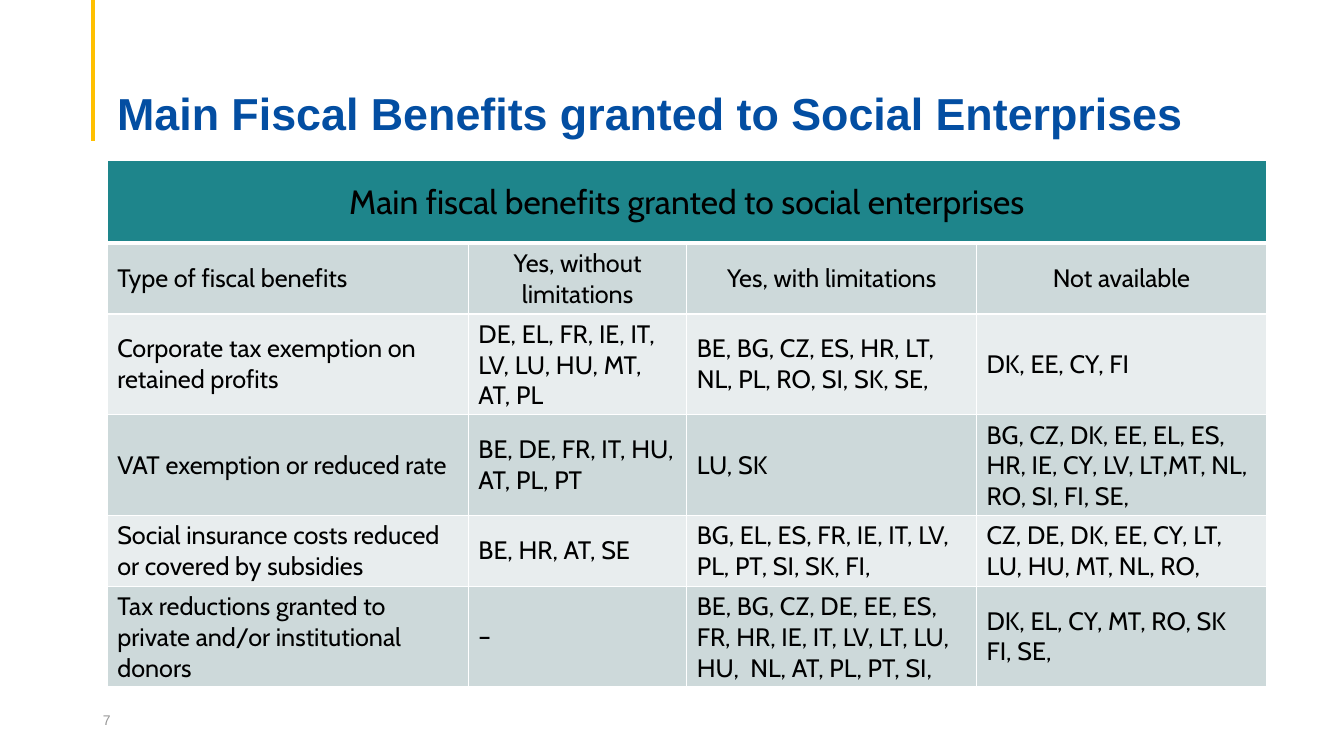
"""Build the slide on the main fiscal benefits granted to social enterprises."""
import pptx
import pptx.dml.color
import pptx.enum.shapes
import pptx.enum.text
import pptx.oxml
import pptx.oxml.ns
import pptx.util

Pt = pptx.util.Pt
RGB = pptx.dml.color.RGBColor.from_string
ALIGN = pptx.enum.text.PP_ALIGN
ANCHOR = pptx.enum.text.MSO_ANCHOR
NS = pptx.oxml.ns.nsdecls("a")

COLORS = {
    "title": "034EA2",
    "accent": "FFC000",
    "number": "979797",
    "text": "000000",
    "border": "FFFFFF",
    "header": "1E858B",
    "dark": "CDD9DA",
    "light": "E8EDEE",
}
COL_WIDTHS = [258, 156, 207, 207]
ROW_HEIGHTS = [59, 50.4, 72, 72, 50.4, 72]
ROWS = [
    ["Main fiscal benefits granted to social enterprises", "", "", ""],
    ["Type of fiscal benefits", "Yes, without limitations",
     "Yes, with limitations", "Not available"],
    ["Corporate tax exemption on retained profits",
     "DE, EL, FR, IE, IT, LV, LU, HU, MT, AT, PL",
     "BE, BG, CZ, ES, HR, LT, NL, PL, RO, SI, SK, SE,",
     "DK, EE, CY, FI"],
    ["VAT exemption or reduced rate",
     "BE, DE, FR, IT, HU, AT, PL, PT",
     "LU, SK",
     "BG, CZ, DK, EE, EL, ES, HR, IE, CY, LV, LT,MT, NL, RO, SI, FI, SE,"],
    ["Social insurance costs reduced or covered by subsidies",
     "BE, HR, AT, SE",
     "BG, EL, ES, FR, IE, IT, LV, PL, PT, SI, SK, FI,",
     "CZ, DE, DK, EE, CY, LT, LU, HU, MT, NL, RO,"],
    ["Tax reductions granted to private and/or institutional donors",
     "–",
     "BE, BG, CZ, DE, EE, ES, FR, HR, IE, IT, LV, LT, LU, HU,  NL, AT, PL, PT, SI,",
     "DK, EL, CY, MT, RO, SK FI, SE,"],
]


def add_run(p, text, font, size, color, bold=False):
    r = p.add_run()
    r.text = text
    r.font.name = font
    r.font.size = Pt(size)
    r.font.bold = bold
    r.font.color.rgb = RGB(COLORS[color])


def add_text(box, anchor, text, size, color, bold=False):
    sp = s.shapes.add_textbox(*map(Pt, box))
    tf = sp.text_frame
    tf.word_wrap = True
    tf.vertical_anchor = anchor
    add_run(tf.paragraphs[0], text, "Arial", size, color, bold)
    return tf


prs = pptx.Presentation()
prs.slide_width, prs.slide_height = Pt(960), Pt(540)
s = prs.slides.add_slide(prs.slide_layouts[6])

line = s.shapes.add_connector(
    pptx.enum.shapes.MSO_CONNECTOR.STRAIGHT, Pt(66.4), Pt(0), Pt(66.4), Pt(100.8))
line.line.color.rgb = RGB(COLORS["accent"])
line.line.width = Pt(2.25)
line._element.spPr.append(pptx.oxml.parse_xml(f"<a:effectLst {NS}/>"))

add_text((66.4, 499.7, 216, 28.8), ANCHOR.MIDDLE, "7", 10, "number")
title = add_text((76.6, 38.2, 828, 62), ANCHOR.BOTTOM,
                 "Main Fiscal Benefits granted to Social Enterprises", 32, "title", True)
title.margin_bottom = Pt(0)
title.paragraphs[0].line_spacing = 0.9

table = s.shapes.add_table(
    len(ROWS), len(COL_WIDTHS), Pt(76.6), Pt(114.8),
    Pt(sum(COL_WIDTHS)), Pt(sum(ROW_HEIGHTS))).table
table.first_row = False
table.horz_banding = False
for col, width in zip(table.columns, COL_WIDTHS):
    col.width = Pt(width)

for i, texts in enumerate(ROWS):
    table.rows[i].height = Pt(ROW_HEIGHTS[i])
    fill = "header" if i == 0 else "dark" if i % 2 else "light"
    for j, text in enumerate(texts):
        cell = table.cell(i, j)
        cell.vertical_anchor = ANCHOR.MIDDLE
        tcPr = cell._tc.get_or_add_tcPr()
        for side in "LRTB":
            thick = (i, side) in ((0, "B"), (1, "T"))
            tcPr.append(pptx.oxml.parse_xml(
                f'<a:ln{side} {NS} w="{Pt(3 if thick else 1)}"><a:solidFill>'
                f'<a:srgbClr val="{COLORS["border"]}"/></a:solidFill></a:ln{side}>'))
        cell.fill.solid()
        cell.fill.fore_color.rgb = RGB(COLORS[fill])
        if text:
            p = cell.text_frame.paragraphs[0]
            centred = i == 0 or (i == 1 and j > 0)
            p.alignment = ALIGN.CENTER if centred else ALIGN.LEFT
            add_run(p, text, "Cabin", 24 if i == 0 else 18, "text")
table.cell(0, 0).merge(table.cell(0, len(COL_WIDTHS) - 1))

prs.save("out.pptx")
